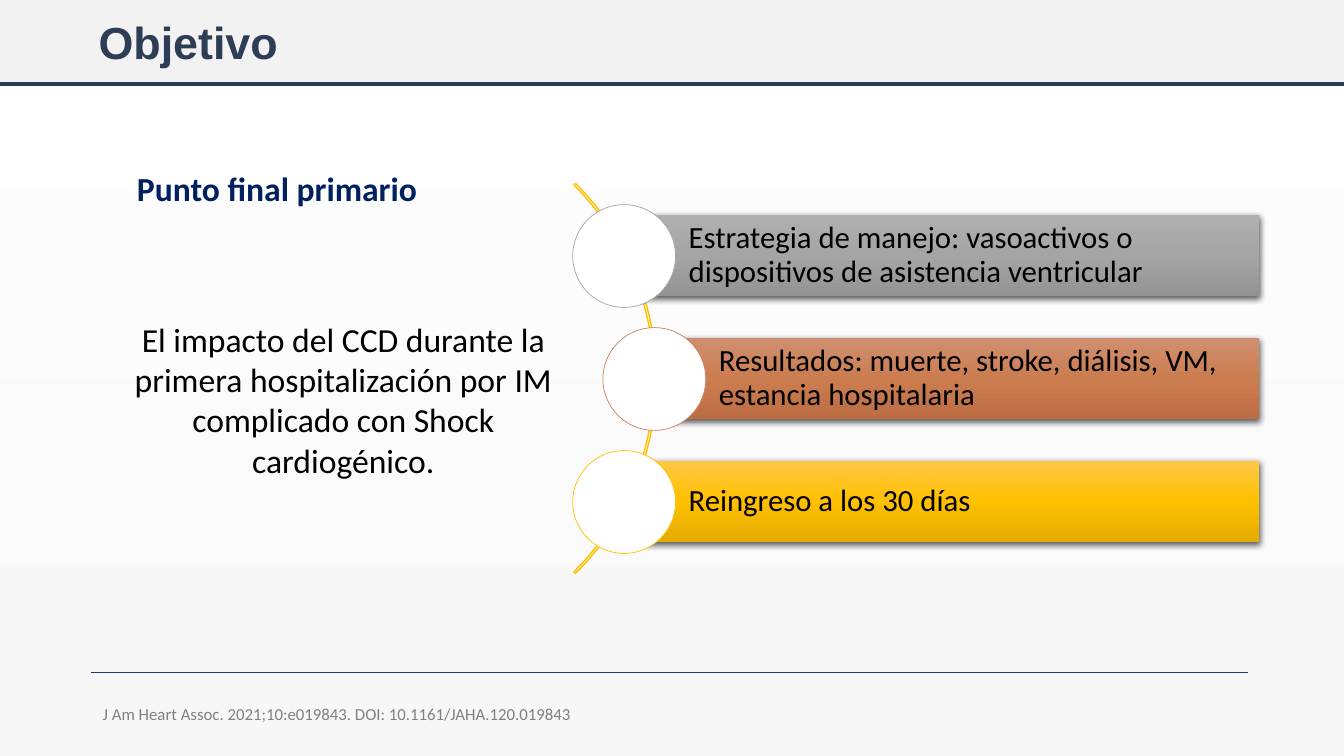
"""Build the "Objetivo" slide: primary endpoint on the left, three measures along an arc."""
import lxml.etree
import pptx
import pptx.dml.color
import pptx.enum.shapes
import pptx.enum.text
import pptx.oxml.ns
import pptx.util
from dataclasses import dataclass
from pptx.util import Inches


@dataclass(frozen=True)
class Theme:
    heading_font: str = "Arial"
    body_font: str = "Calibri"
    navy: str = "2D3D55"
    footer_rule: str = "203864"
    endpoint: str = "002060"
    band: str = "F2F2F2"
    white: str = "FFFFFF"
    backdrop_end: str = "F7F7F7"
    black: str = "000000"
    citation: str = "808080"
    arc: str = "FFC000"
    title_size: int = 32
    body_size: int = 24
    measure_size: int = 22
    citation_size: int = 12


def write(frame, text, size, color, font=Theme.body_font, bold=False, spacing=None,
          align=pptx.enum.text.PP_ALIGN.LEFT, anchor=pptx.enum.text.MSO_ANCHOR.TOP):
    frame.word_wrap = True
    frame.vertical_anchor = anchor
    paragraph = frame.paragraphs[0]
    paragraph.alignment = align
    paragraph.line_spacing = spacing
    run = paragraph.add_run()
    run.text = text
    run.font.size = pptx.util.Pt(size)
    run.font.name = font
    run.font.bold = bold
    run.font.color.rgb = pptx.dml.color.RGBColor.from_string(color)


def shade_down(fill, owner, colors):
    fill.gradient()
    fill.gradient_angle = 270
    stops = owner.xpath(".//a:gsLst")[0]
    for stop in list(stops):
        stops.remove(stop)
    for index, color in enumerate(colors):
        position = str(100000 * index // (len(colors) - 1))
        stop = lxml.etree.SubElement(stops, pptx.oxml.ns.qn("a:gs"), pos=position)
        lxml.etree.SubElement(stop, pptx.oxml.ns.qn("a:srgbClr"), val=color)


theme = Theme()
rgb = pptx.dml.color.RGBColor.from_string
qn = pptx.oxml.ns.qn
shape_kind = pptx.enum.shapes.MSO_SHAPE
middle = pptx.enum.text.MSO_ANCHOR.MIDDLE

deck = pptx.Presentation()
deck.slide_width = Inches(13.33)
deck.slide_height = Inches(7.5)
slide = deck.slides.add_slide(deck.slide_layouts[6])
shade_down(slide.background.fill, slide.element, [theme.white, theme.backdrop_end])

title_band = slide.shapes.add_shape(
    shape_kind.RECTANGLE, 0, 0, Inches(13.33), Inches(0.83))
title_band.shadow.inherit = False
title_band.fill.solid()
title_band.fill.fore_color.rgb = rgb(theme.band)
title_band.line.fill.background()

for left, right, top, color, weight in [
    (0, 13.33, 0.83, theme.navy, 3),
    (0.9, 12.38, 6.67, theme.footer_rule, 0.5),
]:
    rule = slide.shapes.add_connector(
        pptx.enum.shapes.MSO_CONNECTOR.STRAIGHT,
        Inches(left), Inches(top), Inches(right), Inches(top))
    rule.line.color.rgb = rgb(color)
    rule.line.width = pptx.util.Pt(weight)
    lxml.etree.SubElement(rule.element.spPr, qn("a:effectLst"))

title = slide.shapes.add_textbox(Inches(0.88), Inches(-0.08), Inches(11.5), Inches(1.06))
write(title.text_frame, "Objetivo", theme.title_size, theme.navy,
      font=theme.heading_font, bold=True, spacing=0.9, anchor=middle)

impact = slide.shapes.add_textbox(Inches(0.88), Inches(3.11), Inches(5.05), Inches(1.72))
write(impact.text_frame,
      "El impacto del CCD durante la primera hospitalización por IM "
      "complicado con Shock cardiogénico.",
      theme.body_size, theme.black, align=pptx.enum.text.PP_ALIGN.CENTER)

endpoint = slide.shapes.add_textbox(Inches(1.26), Inches(1.62), Inches(4.28), Inches(0.5))
write(endpoint.text_frame, "Punto final primario", theme.body_size, theme.endpoint, bold=True)

arc = slide.shapes.add_shape(
    shape_kind.BLOCK_ARC, Inches(1.04), Inches(1.02), Inches(5.47), Inches(5.47))
arc.shadow.inherit = False
for index, adjustment in enumerate([189, 27, 0.004]):
    arc.adjustments[index] = adjustment
arc.fill.background()
arc.line.color.rgb = rgb(theme.arc)
arc.line.width = pptx.util.Pt(1)

measures = [
    ("Estrategia de manejo: vasoactivos o dispositivos de asistencia ventricular",
     5.68, ["AFAFAF", "A5A5A5", "939393"], "A5A5A5"),
    ("Resultados: muerte, stroke, diálisis, VM, estancia hospitalaria",
     5.98, ["D08F70", "CB7D50", "BC6D42"], "C9805C"),
    ("Reingreso a los 30 días",
     5.68, ["FFC746", "FFC000", "E3AB00"], "FFC000"),
]
for row, (text, node_left, shades, outline) in enumerate(measures):
    bar_top = 2.13 + 1.22 * row
    bar_left = node_left + 0.51
    bar = slide.shapes.add_shape(
        shape_kind.RECTANGLE, Inches(bar_left), Inches(bar_top),
        Inches(12.49 - bar_left), Inches(0.81))
    shade_down(bar.fill, bar.element, shades)
    bar.line.fill.background()
    bar.shadow.inherit = False
    drop = lxml.etree.SubElement(
        bar.element.spPr.find(qn("a:effectLst")), qn("a:outerShdw"),
        blurRad="57150", dist="19050", dir="5400000", algn="ctr", rotWithShape="0")
    tint = lxml.etree.SubElement(drop, qn("a:srgbClr"), val=theme.black)
    lxml.etree.SubElement(tint, qn("a:alpha"), val="63000")
    frame = bar.text_frame
    frame.margin_left = Inches(0.64)
    frame.margin_top = frame.margin_right = frame.margin_bottom = Inches(0.06)
    write(frame, text, theme.measure_size, theme.black, spacing=0.9, anchor=middle)

    node = slide.shapes.add_shape(
        shape_kind.OVAL, Inches(node_left), Inches(bar_top - 0.1), Inches(1.02), Inches(1.02))
    node.shadow.inherit = False
    node.fill.solid()
    node.fill.fore_color.rgb = rgb(theme.white)
    node.line.color.rgb = rgb(outline)
    node.line.width = pptx.util.Pt(0.5)

citation = slide.shapes.add_textbox(Inches(0.92), Inches(6.95), Inches(6.59), Inches(0.55))
write(citation.text_frame, "J Am Heart Assoc. 2021;10:e019843. DOI: 10.1161/JAHA.120.019843",
      theme.citation_size, theme.citation, spacing=0.9)

deck.save("out.pptx")
